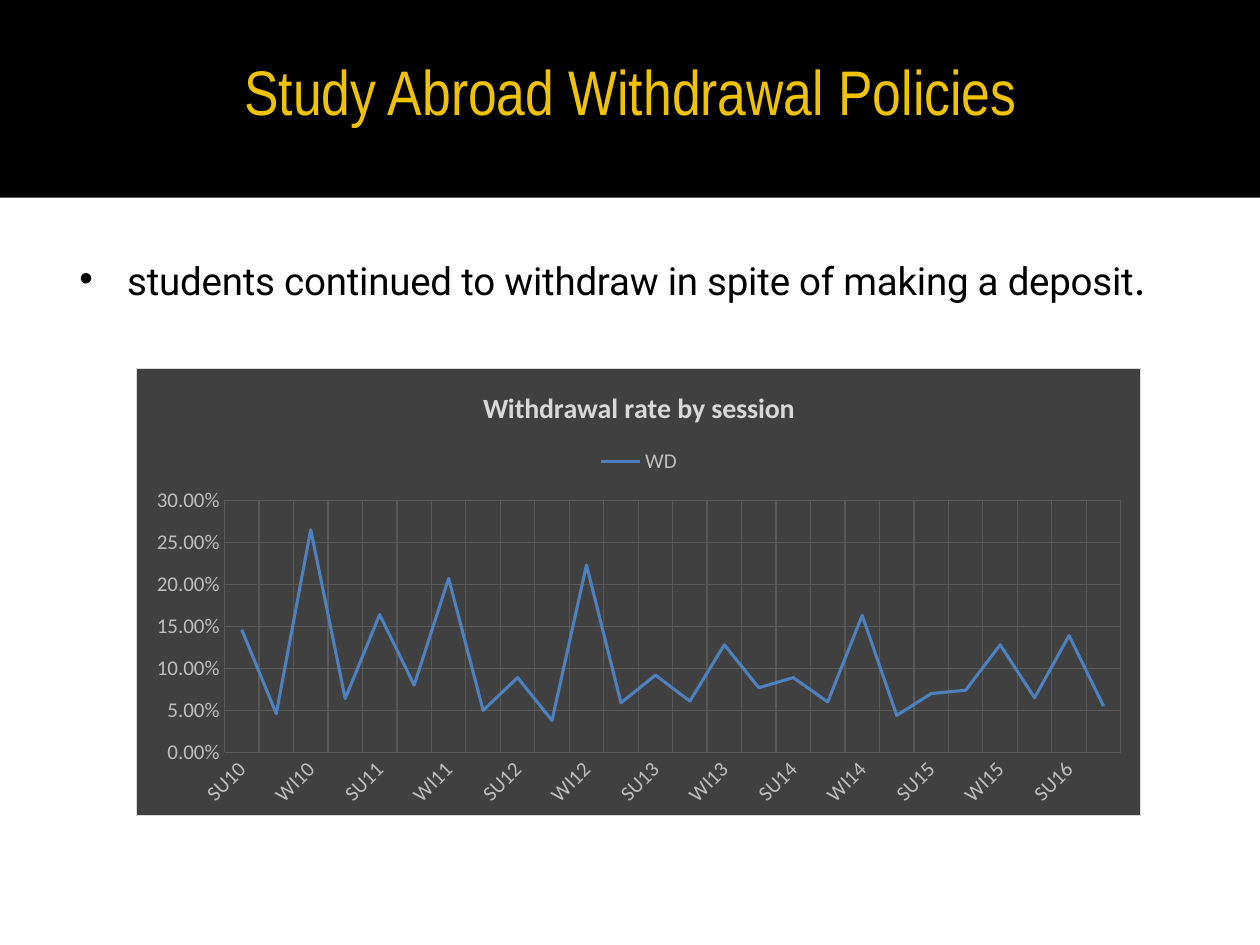
from lxml import etree
from pptx import Presentation
from pptx import util as u
from pptx.chart.data import CategoryChartData
from pptx.dml.color import RGBColor
from pptx.enum import chart as ch, shapes, text
from pptx.oxml import parse_xml
from pptx.oxml.ns import nsdecls, qn

RATES = [0.146, 0.046, 0.265, 0.064, 0.164, 0.08, 0.207, 0.05, 0.089,
         0.038, 0.223, 0.059, 0.092, 0.061, 0.128, 0.077, 0.089, 0.06,
         0.163, 0.044, 0.07, 0.074, 0.128, 0.065, 0.139, 0.055]


def rgb(value):
    return RGBColor.from_string(value)


def box(*lengths):
    return [u.Inches(n) for n in lengths]


def style(font, size, color, name="Calibri", bold=False):
    font.size, font.name, font.bold = u.Pt(size), name, bold
    font.color.rgb = rgb(color)


def add_run(p, words, spacing=None, **fmt):
    r = p.add_run()
    r.text = words
    style(r.font, **fmt)
    if spacing is not None:
        r.font._element.set("spc", str(spacing))


def place(sp, *lengths):
    """Move a placeholder, clear its insets and return its first paragraph."""
    sp.left, sp.top, sp.width, sp.height = box(*lengths)
    tf = sp.text_frame
    tf.margin_left = tf.margin_top = tf.margin_right = tf.margin_bottom = 0
    tf.vertical_anchor = text.MSO_ANCHOR.TOP
    tf.auto_size = text.MSO_AUTO_SIZE.NONE
    tf.word_wrap = True
    p = tf.paragraphs[0]
    p.space_before = u.Pt(0)
    return p


def add_bullet(p, indent):
    pPr = p._p.get_or_add_pPr()
    pPr.set("marL", str(u.Inches(indent)))
    pPr.set("indent", str(-u.Inches(indent)))
    etree.SubElement(pPr, qn("a:buChar")).set("char", "•")


def add_banner(s):
    line = s.shapes.add_connector(shapes.MSO_CONNECTOR.STRAIGHT,
                                  *box(0, 1.59, 10, 1.59))
    line.line.color.rgb = rgb("FFFFFF")
    line.line.width = u.Pt(3.6)
    etree.SubElement(line._element.spPr, qn("a:effectLst"))
    band = s.shapes.add_shape(shapes.MSO_SHAPE.RECTANGLE, *box(0, 0, 10, 1.57))
    band.shadow.inherit = False
    band.fill.solid()
    band.fill.fore_color.rgb = rgb("000000")
    band.line.fill.background()
    # Keep the banner behind the placeholders
    for i, sp in enumerate((line, band)):
        s.shapes._spTree.insert(2 + i, sp._element)


def format_axis(axis):
    axis.has_major_gridlines = True
    grid = axis.major_gridlines.format.line
    grid.color.rgb = rgb("595959")
    grid.width = u.Pt(0.75)
    axis.major_tick_mark = axis.minor_tick_mark = ch.XL_TICK_MARK.NONE
    axis.format.line.fill.background()
    style(axis.tick_labels.font, 12, "BFBFBF")


def add_rate_chart(s):
    terms = ("SU", "FA", "WI", "SP")
    data = CategoryChartData(number_format="0.00%")
    # Spring belongs to the following calendar year
    data.categories = [f"{terms[i % 4]}{10 + (i + 1) // 4}" if i % 4 == 3
                       else f"{terms[i % 4]}{10 + i // 4}"
                       for i in range(len(RATES))]
    data.add_series("WD", RATES)
    chart = s.shapes.add_chart(ch.XL_CHART_TYPE.LINE,
                               *box(1.08, 2.92, 7.98, 3.56), data).chart
    style(chart.font, 10, "000000")

    # Title and legend
    chart.has_title = True
    p = chart.chart_title.text_frame.paragraphs[0]
    add_run(p, "Withdrawal rate by session", size=16, color="D9D9D9", bold=True)
    chart.has_legend = True
    chart.legend.position = ch.XL_LEGEND_POSITION.TOP
    chart.legend.include_in_layout = False
    style(chart.legend.font, 12, "BFBFBF")

    # Axes
    for axis in (chart.category_axis, chart.value_axis):
        format_axis(axis)
    chart.category_axis._element.find(qn("c:txPr")).find(
        qn("a:bodyPr")).set("rot", "-2700000")
    values = chart.value_axis
    values.minimum_scale, values.maximum_scale = 0, 0.3
    values.major_unit = 0.05
    values.tick_labels.number_format = "0.00%"
    values.tick_labels.number_format_is_linked = False

    # Series
    chart.plots[0].vary_by_categories = False
    series = chart.plots[0].series[0]
    series.smooth = False
    series.marker.style = ch.XL_MARKER_STYLE.NONE
    series.format.line.color.rgb = rgb("4F81BD")
    series.format.line.width = u.Pt(1.75)

    # Chart background and border
    area = parse_xml(
        f'<c:spPr {nsdecls("c", "a")}>'
        '<a:solidFill><a:srgbClr val="404040"/></a:solidFill>'
        '<a:ln w="9525"><a:solidFill><a:srgbClr val="D9D9D9"/></a:solidFill>'
        '</a:ln></c:spPr>')
    chart._chartSpace.chart.addnext(area)


def main():
    prs = Presentation()
    prs.slide_width, prs.slide_height = box(10, 7.5)
    s = prs.slides.add_slide(prs.slide_layouts[1])
    add_banner(s)

    p = place(s.shapes.title, 0.94, 0.42, 8.13, 0.61)
    p.alignment = text.PP_ALIGN.CENTER
    add_run(p, "Study Abroad Withdrawal Policies", size=36, color="F0C300",
            name="Arial Narrow")

    p = place(s.placeholders[1], 0.63, 2, 8.7, 1.68)
    add_bullet(p, 0.38)
    add_run(p, "students continued to withdraw in spite of making a deposit",
            size=22, color="000000", name="Roboto", spacing=-10)
    add_run(p, ".", size=25, color="000000", spacing=0)

    add_rate_chart(s)
    prs.save("out.pptx")


if __name__ == "__main__":
    main()
